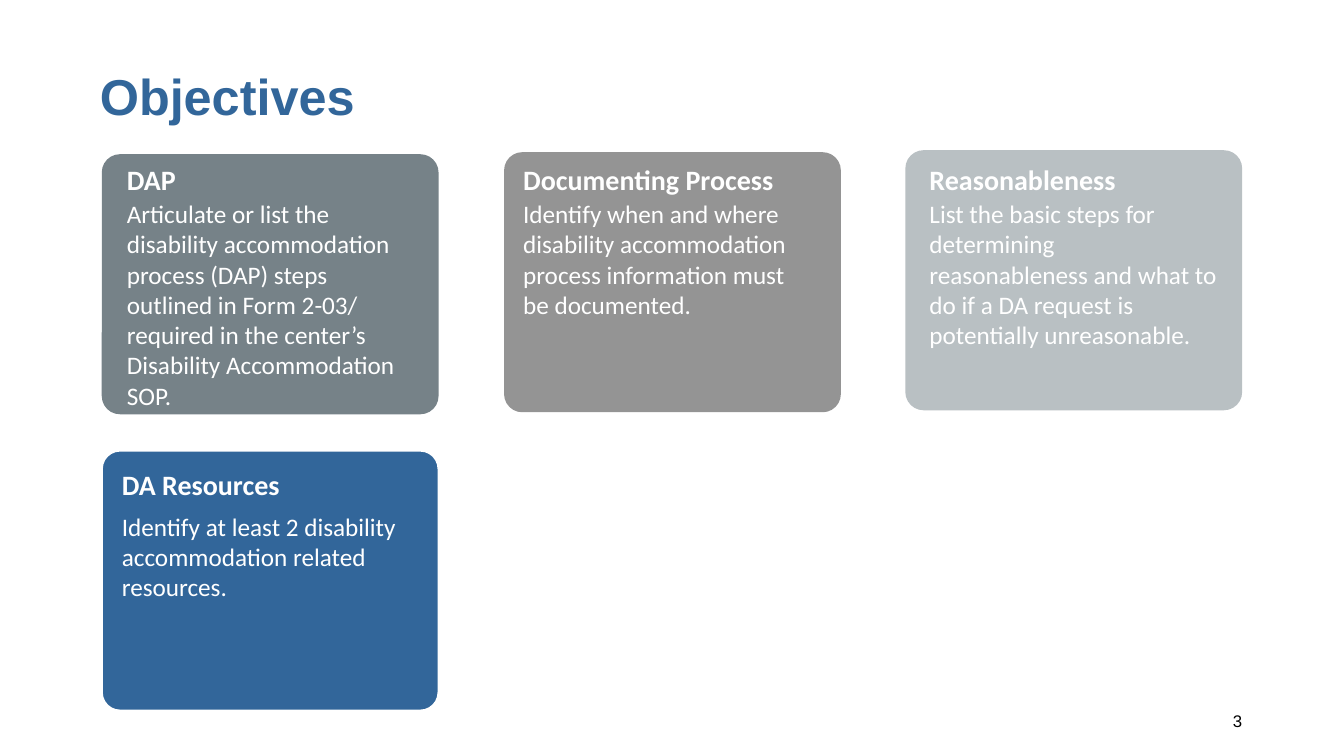
"""Build the Objectives slide with its four rounded cards."""
from pptx import Presentation
from pptx.dml.color import RGBColor
from pptx.enum.shapes import MSO_SHAPE as Preset
from pptx.enum.text import MSO_ANCHOR as Anchor, MSO_AUTO_SIZE as AutoSize, PP_ALIGN as Align
from pptx.util import Pt

PX = 9144
CARD_WIDTH, CARD_HEIGHT = 334, 258
HEADING_HEIGHT = 44

BLUE = RGBColor(0x32, 0x66, 0x9A)
SLATE = RGBColor(0x76, 0x82, 0x88)
GRAY = RGBColor(0x94, 0x94, 0x94)
SILVER = RGBColor(0xB9, 0xC0, 0xC3)
WHITE = RGBColor(0xFF, 0xFF, 0xFF)
BLACK = RGBColor(0x00, 0x00, 0x00)

CARDS = [
    (101, 153, SLATE, None, 116, 156, 305, 192, 305, 222, "DAP",
     "Articulate or list the disability accommodation process (DAP) steps "
     "outlined in Form 2-03/ required in the center’s Disability Accommodation SOP."),
    (500, 151, GRAY, None, 509, 156, 305, 192, 305, 131, "Documenting Process",
     "Identify when and where disability accommodation process information "
     "must be documented."),
    (898, 149, SILVER, None, 912, 156, 305, 192, 305, 162, "Reasonableness",
     "List the basic steps for determining reasonableness and what to do "
     "if a DA request is potentially unreasonable."),
    (101, 447, BLUE, WHITE, 111, 459, 327, 502, 298, 101, "DA Resources",
     "Identify at least 2 disability accommodation related resources."),
]


def px(*lengths):
    """Turn pixel lengths into EMU."""
    return [length * PX for length in lengths]


def write(holder, text, size=18, font="Calibri", color=WHITE, bold=False,
          align=Align.LEFT, anchor=Anchor.TOP):
    """Put one formatted paragraph into a shape."""
    frame = holder.text_frame
    frame.text = text
    frame.word_wrap = True
    frame.auto_size = AutoSize.NONE
    frame.vertical_anchor = anchor
    paragraph = frame.paragraphs[0]
    paragraph.alignment = align
    style = paragraph.runs[0].font
    style.size, style.name, style.bold = Pt(size), font, bold
    style.color.rgb = color


def add_label(slide, left, top, width, height, text, **style):
    """Add a text box with formatted text."""
    write(slide.shapes.add_textbox(*px(left, top, width, height)), text, **style)


def add_title(slide, text):
    """Place and format the title placeholder."""
    title = slide.shapes.title
    title.left, title.top, title.width, title.height = px(89, 60, 990, 71)
    write(title, text, size=36, font="Arial", color=BLUE, bold=True)


def add_card(slide, left, top, fill, outline, text_left, heading_top, heading_width,
             body_top, body_width, body_height, heading, body):
    """Add a rounded card with its heading and body text."""
    card = slide.shapes.add_shape(Preset.ROUNDED_RECTANGLE,
                                  *px(left, top, CARD_WIDTH, CARD_HEIGHT))
    card.adjustments[0] = 0.07
    card.shadow.inherit = False
    card.fill.solid()
    card.fill.fore_color.rgb = fill
    if outline is None:
        card.line.fill.background()
    else:
        card.line.color.rgb = outline
        card.line.width = Pt(1.5)
    add_label(slide, text_left, body_top, body_width, body_height, body)
    add_label(slide, text_left, heading_top, heading_width, HEADING_HEIGHT, heading,
              size=20, bold=True)


def main():
    """Build and save the slide."""
    deck = Presentation()
    deck.slide_width, deck.slide_height = px(1333, 750)
    slide = deck.slides.add_slide(deck.slide_layouts[5])
    add_title(slide, "Objectives")
    for card in CARDS:
        add_card(slide, *card)
    add_label(slide, 942, 695, 300, 40, "3", size=12, font="Arial", color=BLACK,
              align=Align.RIGHT, anchor=Anchor.MIDDLE)
    deck.save("out.pptx")


if __name__ == "__main__":
    main()
